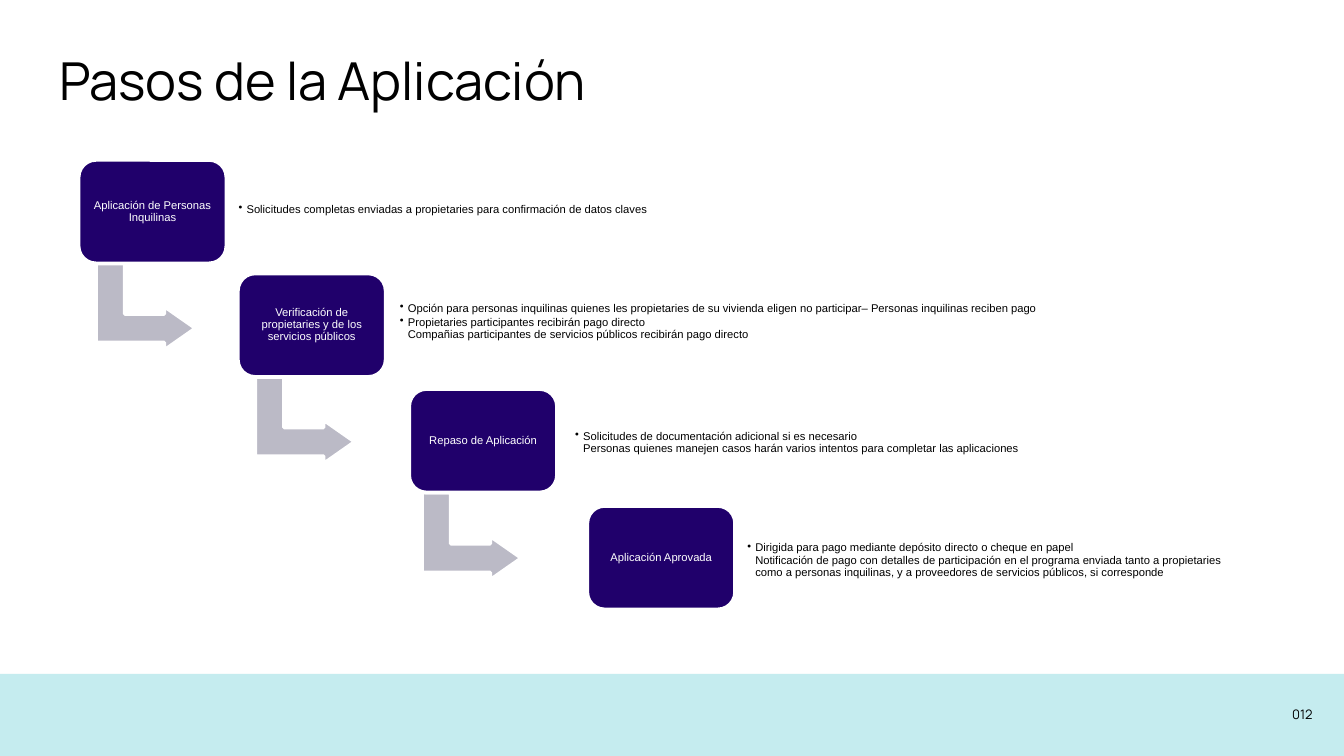
"""Build the slide that shows the steps of the application as a descending staircase."""
from dataclasses import dataclass

from lxml import etree
from pptx import Presentation
from pptx.dml.color import RGBColor
from pptx.enum import shapes, text
from pptx.oxml import ns
from pptx.util import Pt

EMU_PER_PX = 4572
INDIGO, GREY, AQUA = "20006B", "BBBAC6", "C5ECEF"
WHITE, BLACK = "FFFFFF", "000000"
CARD_WIDTH, CARD_HEIGHT = 220, 154
ARROW_WIDTH, ARROW_HEIGHT = 130, 148
DETAIL_HEIGHT = 124
BULLET_INDENT = 12


@dataclass(frozen=True)
class Step:
    """One stage: card position, detail box position and wording."""
    left: int
    top: int
    label: str
    detail_left: int
    detail_top: int
    detail_width: int
    details: tuple[str, ...]
    arrow: tuple[int, int] | None = None


STEPS = (
    Step(117, 238, "Aplicación de Personas Inquilinas", 351, 250, 832,
         ("Solicitudes completas enviadas a propietaries para confirmación de datos claves",),
         (152, 382)),
    Step(354, 407, "Verificación de propietaries y de los servicios públicos", 591, 417, 1066,
         ("Opción para personas inquilinas quienes les propietaries de su vivienda eligen "
          "no participar– Personas inquilinas reciben pago",
          "Propietaries participantes recibirán pago directo\n"
          "Compañias participantes de servicios públicos recibirán pago directo"),
         (389, 551)),
    Step(609, 579, "Repaso de Aplicación", 852, 597, 1120,
         ("Solicitudes de documentación adicional si es necesario\n"
          "Personas quienes manejen casos harán varios intentos para completar las aplicaciones",),
         (637, 724)),
    Step(874, 753, "Aplicación Aprovada", 1108, 772, 758,
         ("Dirigida para pago mediante depósito directo o cheque en papel\n"
          "Notificación de pago con detalles de participación en el programa enviada tanto "
          "a propietaries como a personas inquilinas, y a proveedores de servicios públicos, "
          "si corresponde",)),
)


def px(length: int) -> int:
    """Turn px into EMU."""
    return length * EMU_PER_PX


def color(value: str) -> RGBColor:
    """Turn a hex string into a colour."""
    return RGBColor.from_string(value)


def add_bullet(para) -> None:
    """Give a paragraph a hanging black bullet."""
    properties = para._p.get_or_add_pPr()
    properties.set("marL", str(px(BULLET_INDENT)))
    properties.set("indent", str(-px(BULLET_INDENT)))
    bullet_color = etree.SubElement(properties, ns.qn("a:buClr"))
    etree.SubElement(bullet_color, ns.qn("a:srgbClr"), val=BLACK)
    etree.SubElement(properties, ns.qn("a:buChar"), char="•")


def write(box, *lines: str, font: str = "Arial", size: int = 6, ink: str = BLACK,
          align=text.PP_ALIGN.LEFT, anchor=text.MSO_ANCHOR.MIDDLE, inset: int = 4,
          spacing: float = 0.9, bullets: bool = False) -> None:
    """Fill a shape with formatted paragraphs."""
    frame = box.text_frame
    frame.word_wrap = True
    frame.auto_size = text.MSO_AUTO_SIZE.NONE
    frame.vertical_anchor = anchor
    frame.margin_left = frame.margin_right = px(inset)
    frame.margin_top = frame.margin_bottom = px(inset)
    for index, line in enumerate(lines):
        para = frame.add_paragraph() if index else frame.paragraphs[0]
        para.text = line.replace("\n", "\v")
        if bullets:
            add_bullet(para)
        para.alignment = align
        para.line_spacing = spacing
        para.space_before = Pt(0.9 if index else 0)
        for span in para.runs:
            span.font.name = font
            span.font.size = Pt(size)
            span.font.color.rgb = color(ink)
        for line_break in para._p.findall(ns.qn("a:br")):
            etree.SubElement(line_break, ns.qn("a:rPr"), sz=str(size * 100))
        etree.SubElement(para._p, ns.qn("a:endParaRPr"), sz=str(size * 100))


def add_block(page, kind, left: int, top: int, width: int, height: int, fill: str,
              outlined: bool = True, adjustments: tuple[float, ...] = ()):
    """Add a flat preset shape."""
    box = page.shapes.add_shape(kind, px(left), px(top), px(width), px(height))
    box.shadow.inherit = False
    box.fill.solid()
    box.fill.fore_color.rgb = color(fill)
    if outlined:
        box.line.color.rgb = color(WHITE)
        box.line.width = Pt(2)
    else:
        box.line.fill.background()
    for index, value in enumerate(adjustments):
        box.adjustments[index] = value
    return box


def add_textbox(page, left: int, top: int, width: int, height: int):
    """Add an empty text box."""
    return page.shapes.add_textbox(px(left), px(top), px(width), px(height))


def draw_step(page, step: Step) -> None:
    """Draw the arrow, card and details of one stage."""
    if step.arrow:
        arrow = add_block(page, shapes.MSO_SHAPE.BENT_UP_ARROW, *step.arrow, ARROW_WIDTH,
                          ARROW_HEIGHT, GREY, adjustments=(0.328, 0.25, 0.358))
        arrow.rotation = 90
    card = add_block(page, shapes.MSO_SHAPE.ROUNDED_RECTANGLE, step.left, step.top,
                     CARD_WIDTH, CARD_HEIGHT, INDIGO, adjustments=(0.167,))
    write(card, step.label, ink=WHITE, align=text.PP_ALIGN.CENTER)
    details = add_textbox(page, step.detail_left, step.detail_top, step.detail_width,
                          DETAIL_HEIGHT)
    write(details, *step.details, bullets=True)


def main() -> None:
    """Build and save the deck."""
    deck = Presentation()
    deck.slide_width, deck.slide_height = px(2000), px(1125)
    page = deck.slides.add_slide(deck.slide_layouts[5])

    add_block(page, shapes.MSO_SHAPE.RECTANGLE, -8, 1003, 2016, 126, AQUA, outlined=False)
    title = page.shapes.title
    title.left, title.top, title.width, title.height = px(68), px(52), px(1864), px(126)
    write(title, "Pasos de la Aplicación", font="Manrope", size=28, inset=20, spacing=1.0,
          anchor=text.MSO_ANCHOR.TOP)
    number = add_textbox(page, 1853, 1020, 120, 86)
    write(number, "012", font="Manrope", size=7, inset=20, spacing=1.0,
          align=text.PP_ALIGN.RIGHT)

    for step in STEPS:
        draw_step(page, step)
    deck.save("out.pptx")


if __name__ == "__main__":
    main()
